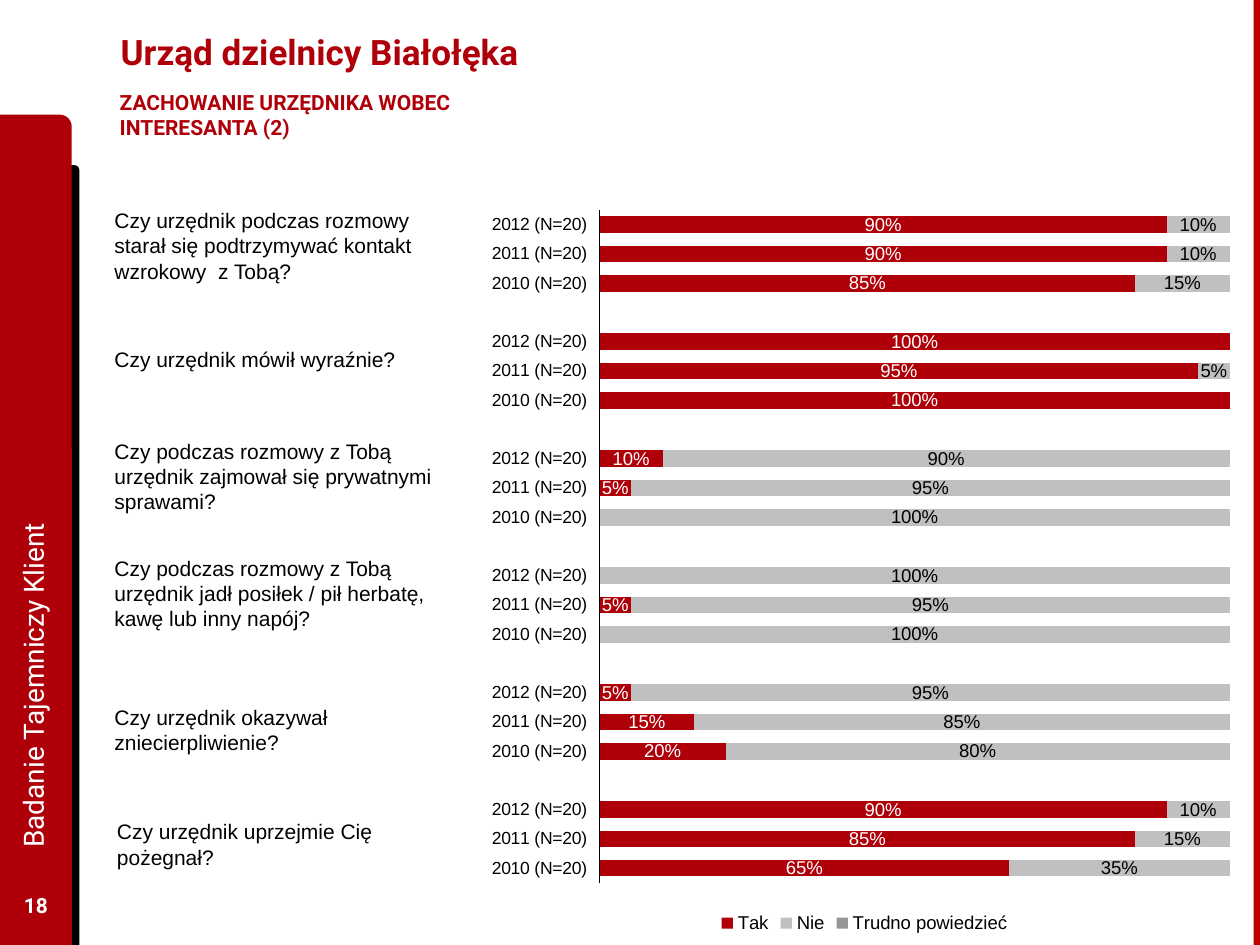
from pptx import Presentation
from pptx.chart.data import CategoryChartData
from pptx.dml.color import RGBColor
from pptx.enum.chart import XL_CHART_TYPE, XL_LABEL_POSITION, XL_LEGEND_POSITION, XL_TICK_LABEL_POSITION, XL_TICK_MARK
from pptx.enum.shapes import MSO_SHAPE
from pptx.enum.text import MSO_ANCHOR, PP_ALIGN
from pptx.util import Inches, Pt
from lxml import etree

STACKED = XL_CHART_TYPE.BAR_STACKED
LABEL_CENTER = XL_LABEL_POSITION.CENTER
LEGEND_BOTTOM = XL_LEGEND_POSITION.BOTTOM
NO_LABELS = XL_TICK_LABEL_POSITION.NONE
LOW_LABELS = XL_TICK_LABEL_POSITION.LOW
NO_TICK = XL_TICK_MARK.NONE
RECT = MSO_SHAPE.RECTANGLE
ROUND_ONE = MSO_SHAPE.ROUND_1_RECTANGLE
TOP, MIDDLE = MSO_ANCHOR.TOP, MSO_ANCHOR.MIDDLE
LEFT, CENTER = PP_ALIGN.LEFT, PP_ALIGN.CENTER

COLORS = {
    "red": "AF000A", "edge": "BD0000", "black": "000000",
    "white": "FFFFFF", "silver": "C0C0C0", "gray": "969696",
}
HEADING, BODY = "Roboto", "Arial"
YEARS = (2012, 2011, 2010)
QUESTIONS = [
    ("Czy urzędnik podczas rozmowy starał się podtrzymywać kontakt wzrokowy  z Tobą?",
     (0.81, 1.6, 2.72, 0.7), (90, 90, 85)),
    ("Czy urzędnik mówił wyraźnie?",
     (0.81, 2.7, 2.72, 0.3), (100, 95, 100)),
    ("Czy podczas rozmowy z Tobą urzędnik zajmował się prywatnymi sprawami?",
     (0.81, 3.43, 2.72, 0.7), (10, 5, 0)),
    ("Czy podczas rozmowy z Tobą urzędnik jadł posiłek / pił herbatę, kawę lub inny napój?",
     (0.81, 4.36, 2.72, 0.7), (0, 5, 0)),
    ("Czy urzędnik okazywał zniecierpliwienie?",
     (0.81, 5.54, 2.72, 0.5), (5, 15, 20)),
    ("Czy urzędnik uprzejmie Cię pożegnał?",
     (0.83, 6.45, 2.72, 0.5), (90, 85, 65)),
]
PLOT_LAYOUT = {"x": 0.152, "y": 0.02, "w": 0.828, "h": 0.905}


def apply(target, values):
    for name, value in values.items():
        setattr(target, name, value)


def rgb(color):
    return RGBColor.from_string(COLORS[color])


def share(percent):
    return percent / 100 if percent else None


class SlideBuilder:
    def __init__(self, slide):
        self.slide = slide

    def style(self, font, size, color="black", face=BODY, bold=False):
        apply(font, {"name": face, "size": Pt(size), "bold": bold})
        font.color.rgb = rgb(color)

    def panel(self, box, color, kind=RECT):
        panel = self.slide.shapes.add_shape(kind, *map(Inches, box))
        panel.shadow.inherit = False
        panel.fill.solid()
        panel.fill.fore_color.rgb = rgb(color)
        panel.line.fill.background()

    def text(self, words, box, size=12, color="black", face=BODY, bold=False,
             anchor=TOP, align=LEFT, wrap=True, side=0.1, rotation=0):
        holder = self.slide.shapes.add_textbox(*map(Inches, box))
        holder.rotation = rotation
        apply(holder.text_frame, {
            "word_wrap": wrap, "vertical_anchor": anchor,
            "margin_left": Inches(side), "margin_right": Inches(side),
        })
        paragraph = holder.text_frame.paragraphs[0]
        paragraph.alignment = align
        run = paragraph.add_run()
        run.text = words
        self.style(run.font, size, color, face, bold)

    def chart(self, box, categories, answers):
        data = CategoryChartData(number_format="0%")
        data.categories = categories
        for name, values, *_ in answers:
            data.add_series(name, values)
        chart = self.slide.shapes.add_chart(STACKED, *map(Inches, box), data).chart
        apply(chart, {"has_title": False, "has_legend": True})
        self.style(chart.font, 10.6)
        apply(chart.legend, {"position": LEGEND_BOTTOM, "include_in_layout": False})
        self.style(chart.legend.font, 10.6)
        plot = chart.plots[0]
        apply(plot, {"gap_width": 75, "overlap": 100, "vary_by_categories": False})
        for series, (_, _, fill, label) in zip(plot.series, answers):
            series.format.fill.solid()
            series.format.fill.fore_color.rgb = rgb(fill)
            if label:
                labels = series.data_labels
                apply(labels, {
                    "show_value": True, "number_format": "0%",
                    "number_format_is_linked": False, "position": LABEL_CENTER,
                })
                self.style(labels.font, 10.6, label)
        self.axes(chart)
        self.plot_layout(chart)

    def axes(self, chart):
        ticks = {"major_tick_mark": NO_TICK, "minor_tick_mark": NO_TICK,
                 "has_major_gridlines": False}
        apply(chart.category_axis, {
            **ticks, "reverse_order": True, "tick_label_position": LOW_LABELS,
        })
        self.style(chart.category_axis.tick_labels.font, 10)
        line = chart.category_axis.format.line
        line.width = Pt(0.23)
        line.color.rgb = rgb("black")
        apply(chart.value_axis, {
            **ticks, "minimum_scale": 0, "maximum_scale": 1, "major_unit": 0.2,
            "tick_label_position": NO_LABELS,
        })
        chart.value_axis.format.line.fill.background()

    def plot_layout(self, chart):
        area = chart.plots[0]._element.getparent()
        space = "{%s}" % area.nsmap["c"]
        for old in area.findall(space + "layout"):
            area.remove(old)
        layout = etree.Element(space + "layout")
        area.insert(0, layout)
        manual = etree.SubElement(layout, space + "manualLayout")
        settings = {"layoutTarget": "inner", "xMode": "edge", "yMode": "edge", **PLOT_LAYOUT}
        for name, value in settings.items():
            etree.SubElement(manual, space + name).set("val", str(value))


def main():
    deck = Presentation()
    apply(deck, {"slide_width": Inches(10), "slide_height": Inches(7.5)})
    page = SlideBuilder(deck.slides.add_slide(deck.slide_layouts[6]))

    page.panel((0.39, 1.31, 0.24, 6.19), "black", ROUND_ONE)
    page.panel((0, 0.91, 0.57, 6.59), "red", ROUND_ONE)
    page.panel((9.95, 0, 0.05, 7.5), "edge")
    heading = {"color": "red", "face": HEADING, "bold": True}
    page.text("Urząd dzielnicy Białołęka", (0.86, 0.05, 7.77, 0.72), 20,
              anchor=MIDDLE, **heading)
    page.text("ZACHOWANIE URZĘDNIKA WOBEC INTERESANTA (2)", (0.75, 0.66, 3.85, 0.33),
              wrap=False, side=0.2, **heading)

    categories, yes, no = [], [], []
    for number, (_, _, percents) in enumerate(QUESTIONS):
        if number:
            categories.append("")
            yes.append(None)
            no.append(None)
        categories += [f"{year} (N=20)" for year in YEARS]
        yes += [share(percent) for percent in percents]
        no += [share(100 - percent) for percent in percents]
    page.chart((3.84, 1.55, 6.04, 5.9), categories, [
        ("Tak", yes, "red", "white"),
        ("Nie", no, "silver", "black"),
        ("Trudno powiedzieć", [None] * len(categories), "gray", None),
    ])
    for question, box, _ in QUESTIONS:
        page.text(question, box)

    sidebar = {"color": "white", "face": HEADING, "anchor": MIDDLE}
    page.text("18", (0, 6.98, 0.57, 0.4), bold=True, align=CENTER, **sidebar)
    page.text("Badanie Tajemniczy Klient", (-2.62, 3.69, 5.76, 0.51), 16,
              rotation=270, **sidebar)
    deck.save("out.pptx")


if __name__ == "__main__":
    main()
